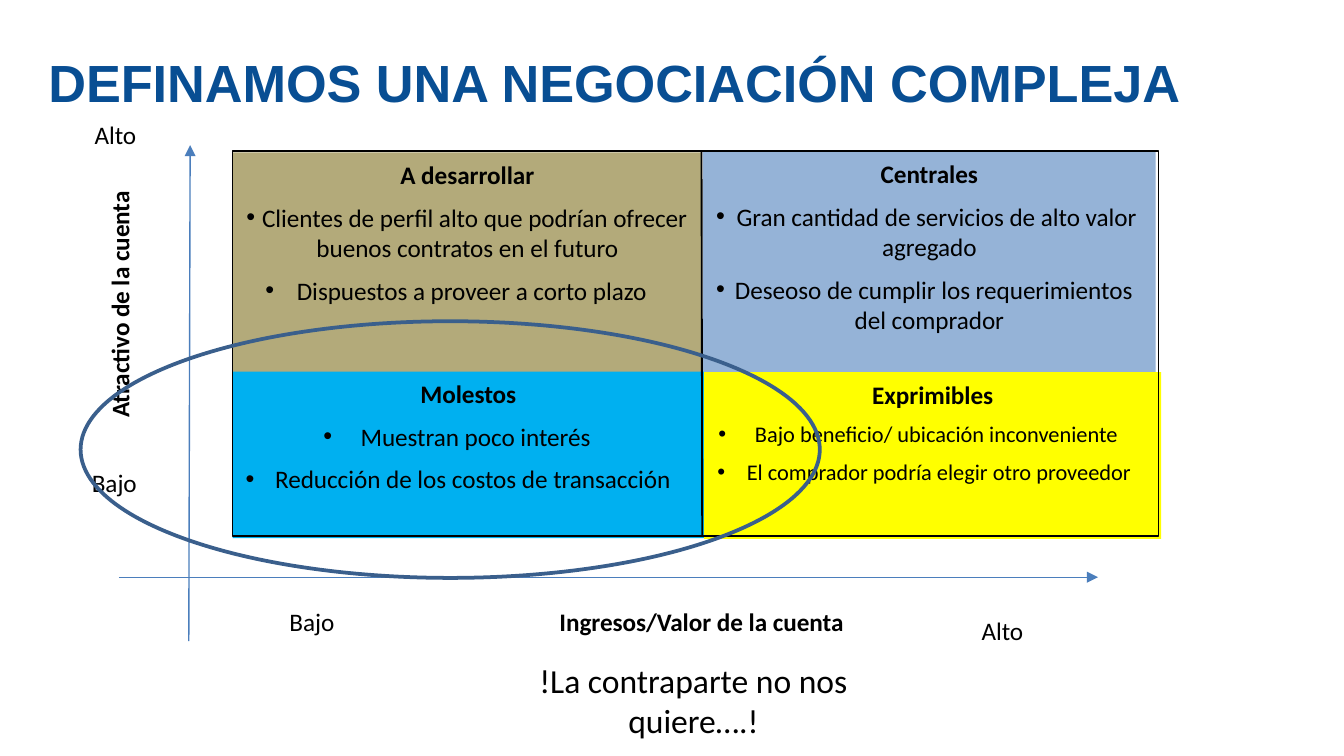
import lxml.etree
import pptx
import pptx.dml.color
import pptx.enum.shapes
import pptx.enum.text
import pptx.oxml.ns
import pptx.util

EMU_PER_PX = 4572
BULLET_HANG = 47
SHAPES = pptx.enum.shapes.MSO_SHAPE
CENTER = pptx.enum.text.PP_ALIGN.CENTER
LEFT = pptx.enum.text.PP_ALIGN.LEFT


def px(value):
    return pptx.util.Emu(value * EMU_PER_PX)


def color(hex_string):
    return pptx.dml.color.RGBColor.from_string(hex_string)


def add_xml(parent, tag, **attributes):
    return lxml.etree.SubElement(parent, pptx.oxml.ns.qn(tag), **attributes)


def format_paragraph(paragraph, text, size, bold=False, align=LEFT, font="Calibri", hex_string="000000"):
    paragraph.text = text
    paragraph.alignment = align
    for run in paragraph.runs:
        run.font.name = font
        run.font.size = pptx.util.Pt(size)
        run.font.bold = bold
        run.font.color.rgb = color(hex_string)


def add_bullet(paragraph):
    properties = paragraph._p.get_or_add_pPr()
    properties.set("marL", "0")
    properties.set("indent", str(-px(BULLET_HANG)))
    add_xml(properties, "a:buFont", typeface="Arial")
    add_xml(properties, "a:buChar", char="•")


def add_figure(slide, kind, box, fill=None, line=None, width=1):
    shape = slide.shapes.add_shape(kind, *map(px, box))
    shape.shadow.inherit = False
    if fill:
        shape.fill.solid()
        shape.fill.fore_color.rgb = color(fill)
    else:
        shape.fill.background()
    if line:
        shape.line.color.rgb = color(line)
        shape.line.width = pptx.util.Pt(width)
    else:
        shape.line.fill.background()
    return shape


def add_label(slide, box, text, size=13.5, **style):
    shape = slide.shapes.add_textbox(*map(px, box))
    shape.text_frame.word_wrap = True
    format_paragraph(shape.text_frame.paragraphs[0], text, size, **style)
    return shape


def add_line(slide, start, end, hex_string, width, arrow=False):
    connector = slide.shapes.add_connector(
        pptx.enum.shapes.MSO_CONNECTOR.STRAIGHT, *map(px, start + end))
    connector.line.color.rgb = color(hex_string)
    connector.line.width = pptx.util.Pt(width)
    if arrow:
        add_xml(connector.line._get_or_add_ln(), "a:tailEnd", type="triangle")
    add_xml(connector._element.spPr, "a:effectLst")


def add_quadrant(slide, box, fill, heading, points, size=13.5):
    shape = add_figure(slide, SHAPES.RECTANGLE, box, fill)
    frame = shape.text_frame
    frame.word_wrap = True
    frame.vertical_anchor = pptx.enum.text.MSO_ANCHOR.TOP
    format_paragraph(frame.paragraphs[0], heading, 13.5, bold=True, align=CENTER)
    for point in points:
        paragraph = frame.add_paragraph()
        format_paragraph(paragraph, point, size, align=CENTER)
        paragraph.space_before = pptx.util.Pt(size / 2)
        add_bullet(paragraph)


def add_title(slide, box):
    title = add_label(slide, box, "DEFINAMOS UNA NEGOCIACIÓN COMPLEJA", 28,
                      bold=True, font="Arial", hex_string="084E93")
    frame = title.text_frame
    frame.margin_left = frame.margin_top = frame.margin_right = frame.margin_bottom = 0
    frame.paragraphs[0].line_spacing = pptx.util.Pt(32.1)


def add_matrix(slide, box):
    left, top, width, height = box
    add_quadrant(slide, (left + 1, top + 2, 697, 452), "B3AA7A", "A desarrollar",
                 [" Clientes de perfil alto que podrían ofrecer buenos contratos en el futuro",
                  "Dispuestos a proveer a corto plazo"])
    add_quadrant(slide, (left + 700, top + 1, 674, 338), "95B3D7", "Centrales",
                 [" Gran cantidad de servicios de alto valor agregado",
                  "Deseoso de cumplir los requerimientos del comprador\n"])
    add_quadrant(slide, (left, top + 328, 702, 248), "00B0F0", "Molestos",
                 [" Muestran poco interés", "Reducción de los costos de transacción\n"])
    add_quadrant(slide, (left + 702, top + 329, 680, 248), "FFFF00", "Exprimibles",
                 [" Bajo beneficio/ ubicación inconveniente ",
                  " El comprador podría elegir otro proveedor"], size=12)
    add_figure(slide, SHAPES.RECTANGLE, box, line="000000")
    add_line(slide, (left + 698, top + 1), (left + 699, top + height + 1), "000000", 1)


def add_axes(slide, box):
    left, top, width, height = box
    labels = [(234, 677, "Bajo"), (-60, 470, "Bajo"), (-56, -48, "Alto"), (1264, 690, "Alto")]
    for x, y, text in labels:
        add_label(slide, (left + x, top + y, 184, 66), text)
    add_label(slide, (left + 478, top + 677, 778, 66), "Ingresos/Valor de la cuenta",
              bold=True, align=CENTER)
    vertical = add_label(slide, (left - 218, top + 204, 438, 66), "Atractivo de la cuenta",
                         bold=True, align=CENTER)
    vertical.rotation = 270
    add_line(slide, (left + 104, top + height), (left + 106, top), "4B7EBC", 0.75, arrow=True)
    add_line(slide, (left, top + 643), (left + width, top + 643), "4B7EBC", 0.75, arrow=True)


def add_highlight(slide, box):
    add_figure(slide, SHAPES.OVAL, box, line="3A5F8C", width=2)


def main():
    presentation = pptx.Presentation()
    presentation.slide_width = px(2000)
    presentation.slide_height = px(1125)
    slide = presentation.slides.add_slide(presentation.slide_layouts[6])
    add_matrix(slide, (346, 225, 1378, 573))
    add_axes(slide, (177, 216, 1457, 738))
    add_title(slide, (72, 79, 1734, 90))
    add_highlight(slide, (120, 478, 1100, 382))
    add_label(slide, (686, 972, 692, 142), "!La contraparte no nos quiere….!", 18, align=CENTER)
    presentation.save("out.pptx")


if __name__ == "__main__":
    main()
